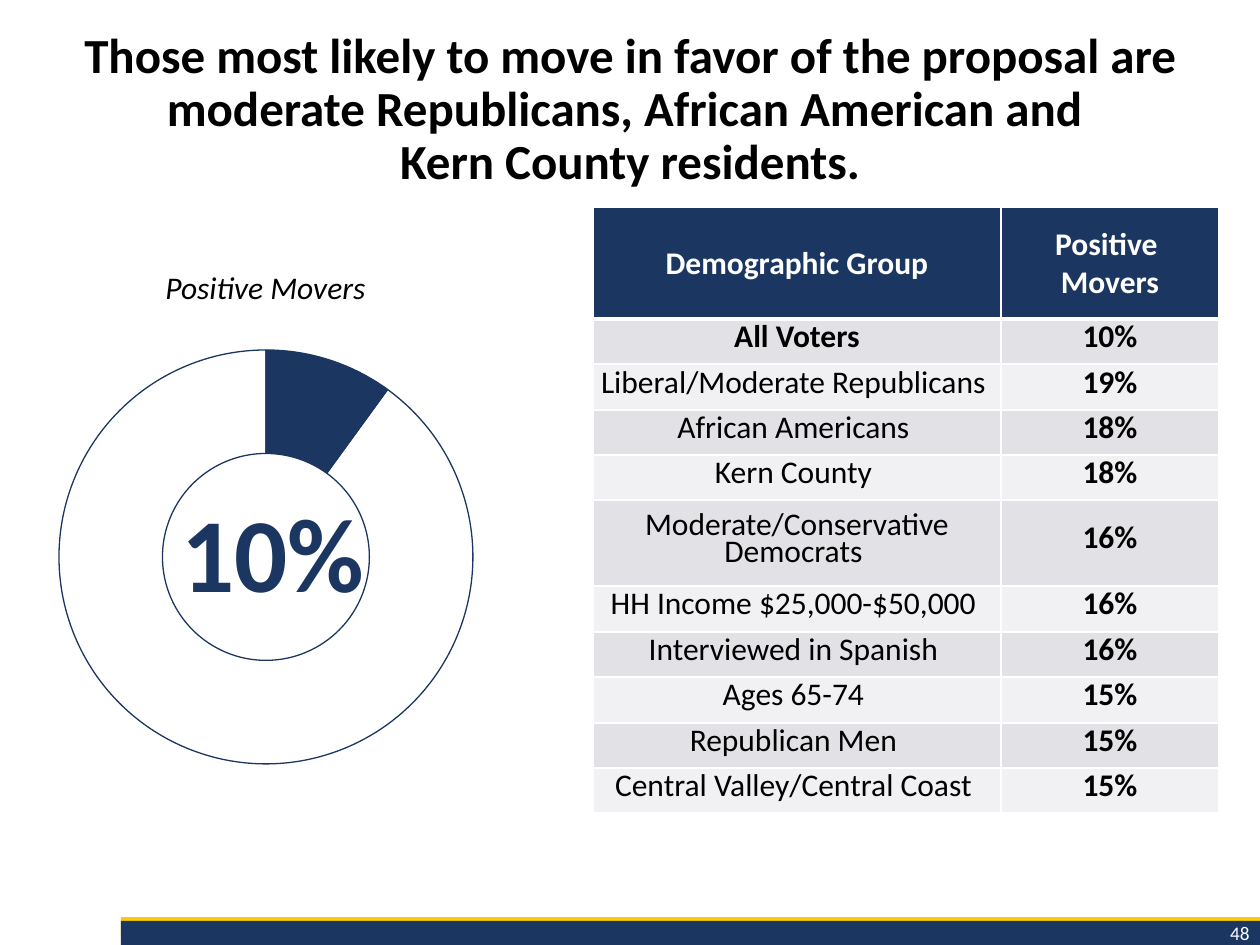
"""Build the slide on positive movers: doughnut chart, demographic table and footer."""
from dataclasses import dataclass
from itertools import pairwise

from lxml.etree import SubElement
from pptx import Presentation
from pptx.chart.data import CategoryChartData
from pptx.dml.color import RGBColor
from pptx.enum.chart import XL_CHART_TYPE
from pptx.enum.shapes import MSO_SHAPE
from pptx.enum.text import MSO_ANCHOR, MSO_AUTO_SIZE, PP_ALIGN
from pptx.oxml.ns import qn
from pptx.util import Emu, Pt


@dataclass(frozen=True)
class Theme:
    font: str = "Calibri"
    navy: str = "1B3660"
    gold: str = "FCCA09"
    black: str = "000000"
    white: str = "FFFFFF"
    bands: tuple[str, str] = ("E2E2E6", "F1F1F3")
    title: int = 28
    body: int = 18
    figure: int = 60
    number: int = 11
    chart: int = 10


@dataclass(frozen=True)
class Box:
    x: int
    y: int
    w: int
    h: int

    def emu(self) -> tuple[Emu, ...]:
        return tuple(px(v) for v in (self.x, self.y, self.w, self.h))


@dataclass(frozen=True)
class Group:
    name: str
    share: str
    bold: bool = False


THEME = Theme()
EMU_PER_PX = 914400 / 126
COLUMNS = (408, 218)
ROW_EDGES = (207, 319, 364, 410, 455, 500, 586, 632, 677, 723, 768, 813)
GROUPS = (
    Group("All Voters", "10%", bold=True),
    Group("Liberal/Moderate Republicans ", "19%"),
    Group("African Americans ", "18%"),
    Group("Kern County ", "18%"),
    Group("Moderate/Conservative Democrats ", "16%"),
    Group("HH Income $25,000-$50,000 ", "16%"),
    Group("Interviewed in Spanish ", "16%"),
    Group("Ages 65-74 ", "15%"),
    Group("Republican Men ", "15%"),
    Group("Central Valley/Central Coast ", "15%"),
)


def px(value: int) -> Emu:
    return Emu(round(value * EMU_PER_PX))


def rgb(color: str) -> RGBColor:
    return RGBColor.from_string(color)


def write(tf, text: str, *, size=THEME.body, color=THEME.black, bold=False,
          italic=False, align=PP_ALIGN.CENTER, spacing=None, indent=0) -> None:
    """Fill a text frame; a newline starts a paragraph and a vertical tab a line."""
    for i, line in enumerate(text.split("\n")):
        p = tf.add_paragraph() if i else tf.paragraphs[0]
        p.alignment = align
        if spacing:
            p.line_spacing = spacing
        if indent:
            p._p.get_or_add_pPr().set("marL", str(px(indent)))
        for j, part in enumerate(line.split("\v")):
            if j:
                p.add_line_break()
            r = p.add_run()
            r.text = part
            r.font.name, r.font.size = THEME.font, Pt(size)
            r.font.bold, r.font.italic = bold, italic
            r.font.color.rgb = rgb(color)


def add_label(s, box: Box, text: str, *, anchor=MSO_ANCHOR.TOP, **fmt) -> None:
    tf = s.shapes.add_textbox(*box.emu()).text_frame
    tf.word_wrap = True
    tf.vertical_anchor = anchor
    write(tf, text, **fmt)


def add_bar(s, box: Box, color: str) -> None:
    sp = s.shapes.add_shape(MSO_SHAPE.RECTANGLE, *box.emu())
    sp.shadow.inherit = False
    sp.fill.solid()
    sp.fill.fore_color.rgb = rgb(color)
    sp.line.fill.background()


def set_title(s, box: Box, text: str) -> None:
    title = s.shapes.title
    title.left, title.top, title.width, title.height = box.emu()
    tf = title.text_frame
    tf.vertical_anchor = MSO_ANCHOR.TOP
    tf.auto_size = MSO_AUTO_SIZE.NONE
    write(tf, text, size=THEME.title, bold=True, spacing=0.9)


def style_cell(cell, text: str, fill: str, *, side=1, bottom=1, **fmt) -> None:
    """Give a table cell its borders, fill, margins and text."""
    tcPr = cell._tc.get_or_add_tcPr()
    for edge, width in (("L", 1), ("R", 1), ("T", 1), ("B", bottom)):
        ln = SubElement(tcPr, qn(f"a:ln{edge}"), w=str(Pt(width)))
        SubElement(SubElement(ln, qn("a:solidFill")), qn("a:srgbClr"), val=THEME.white)
    cell.fill.solid()
    cell.fill.fore_color.rgb = rgb(fill)
    cell.vertical_anchor = MSO_ANCHOR.MIDDLE
    cell.margin_left = cell.margin_right = px(side)
    cell.margin_top, cell.margin_bottom = px(1), 0
    write(cell.text_frame, text, **fmt)


def add_group_table(s, left: int) -> None:
    box = Box(left, ROW_EDGES[0], sum(COLUMNS), ROW_EDGES[-1] - ROW_EDGES[0])
    table = s.shapes.add_table(len(GROUPS) + 1, len(COLUMNS), *box.emu()).table
    table.horz_banding = False
    for column, width in zip(table.columns, COLUMNS):
        column.width = px(width)
    for row, (top, bottom) in zip(table.rows, pairwise(ROW_EDGES)):
        row.height = px(bottom - top)
    for col, text in enumerate(("Demographic Group", "Positive \nMovers")):
        style_cell(table.cell(0, col), text, THEME.navy, side=13, bottom=3,
                   color=THEME.white, bold=True)
    for i, group in enumerate(GROUPS):
        fill = THEME.bands[i % 2]
        for col, (text, bold) in enumerate(((group.name, group.bold), (group.share, True))):
            style_cell(table.cell(i + 1, col), text, fill, bold=bold, spacing=Pt(16))


def add_doughnut(s, box: Box, ring: Box) -> None:
    """Add the movers doughnut, with its ring placed inside the chart box."""
    data = CategoryChartData()
    data.categories = ["1", ""]
    data.add_series("Series 1", (10, 90))
    chart = s.shapes.add_chart(XL_CHART_TYPE.DOUGHNUT, *box.emu(), data).chart
    chart.has_legend = chart.has_title = False
    chart.font.name, chart.font.size = THEME.font, Pt(THEME.chart)
    chart.font.color.rgb = rgb(THEME.black)
    plot = chart.plots[0]
    plot.vary_by_categories = False
    plot._element.find(qn("c:holeSize")).set("val", "58")
    for i in range(2):
        point = plot.series[0].points[i].format
        point.line.color.rgb = rgb(THEME.navy)
        point.line.width = Pt(0.75)
        if i:
            point.fill.background()
        else:
            point.fill.solid()
            point.fill.fore_color.rgb = rgb(THEME.navy)
    area = chart._chartSpace.chart.plotArea
    layout = area.find(qn("c:layout"))
    if layout is None:
        layout = SubElement(area, qn("c:layout"))
        area.insert(0, layout)
    manual = SubElement(layout, qn("c:manualLayout"))
    for tag, value in (("layoutTarget", "inner"), ("xMode", "edge"), ("yMode", "edge"),
                       ("x", (ring.x - box.x) / box.w), ("y", (ring.y - box.y) / box.h),
                       ("w", ring.w / box.w), ("h", ring.h / box.h)):
        SubElement(manual, qn(f"c:{tag}"), val=str(value))


def main() -> None:
    prs = Presentation()
    prs.slide_width, prs.slide_height = px(1260), px(945)
    s = prs.slides.add_slide(prs.slide_layouts[5])
    add_bar(s, Box(121, 917, 1139, 20), THEME.gold)
    add_bar(s, Box(121, 921, 1139, 24), THEME.navy)
    add_label(s, Box(1076, 915, 186, 37), "48", size=THEME.number,
              color=THEME.white, align=PP_ALIGN.RIGHT)
    add_label(s, Box(40, 262, 436, 50), "Positive Movers", italic=True, indent=15)
    add_group_table(s, left=593)
    add_doughnut(s, Box(18, 333, 496, 449), Box(59, 350, 414, 414))
    add_label(s, Box(150, 490, 231, 136), "10%", anchor=MSO_ANCHOR.MIDDLE,
              size=THEME.figure, color=THEME.navy, bold=True, spacing=0.9, indent=15)
    set_title(s, Box(0, 25, 1260, 154),
              "Those most likely to move in favor of the proposal are moderate "
              "Republicans, African American and \vKern County residents.")
    prs.save("out.pptx")


if __name__ == "__main__":
    main()
